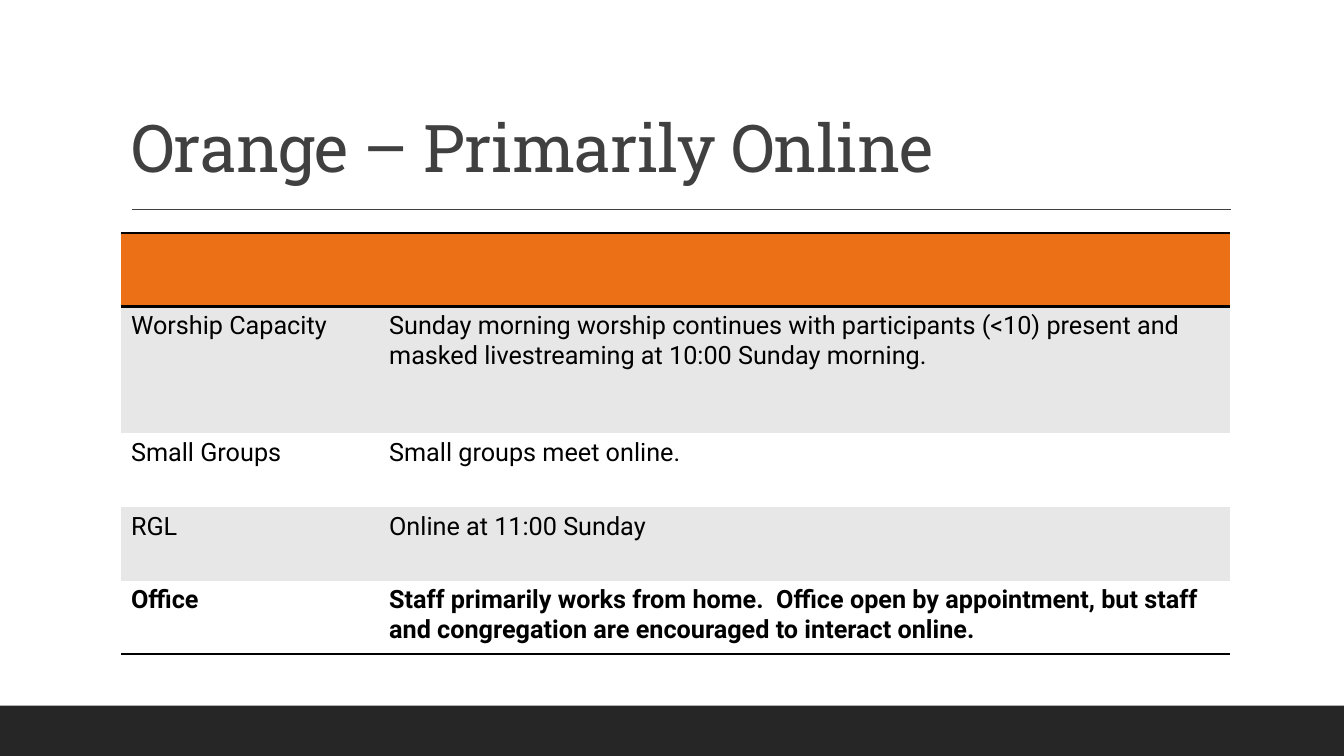
from dataclasses import dataclass

import pptx
import pptx.dml.color
import pptx.enum.shapes
import pptx.enum.text
import pptx.oxml
import pptx.oxml.ns
import pptx.util
from pptx.util import Inches

BLACK, WHITE, GREY = "000000", "FFFFFF", "E7E7E7"
ORANGE, CHARCOAL, FOOTER = "EC7016", "404040", "262626"
LEFT, WIDTH = 1.2, 11
COLUMN_WIDTHS = (2.56, 8.44)


@dataclass
class Row:
    texts: tuple[str, str]
    fill: str
    height: float = 0.73
    bold: bool = False
    rules: str = ""  # sides with a black rule: T, B


ROWS = [
    Row(("", ""), ORANGE, rules="TB"),
    Row(("Worship Capacity",
         "Sunday morning worship continues with participants (<10) present and "
         "masked livestreaming at 10:00 Sunday morning."), GREY, height=1.26, rules="T"),
    Row(("Small Groups", "Small groups meet online."), WHITE),
    Row(("RGL", "Online at 11:00 Sunday"), GREY),
    Row(("Office",
         "Staff primarily works from home.  Office open by appointment, but staff "
         "and congregation are encouraged to interact online."), WHITE, bold=True, rules="B"),
]


def rgb(color: str) -> pptx.dml.color.RGBColor:
    return pptx.dml.color.RGBColor.from_string(color)


def add_run(p, text: str, font: str, size: float, color: str, bold: bool = False):
    r = p.add_run()
    r.text = text
    r.font.name, r.font.size, r.font.bold = font, pptx.util.Pt(size), bold
    r.font.color.rgb = rgb(color)
    return r


def set_borders(cell, rules: str) -> None:
    """Rule the given sides in black and clear the others."""
    tc_pr = cell._tc.get_or_add_tcPr()
    for i, side in enumerate("LRTB"):
        paint = f'<a:solidFill><a:srgbClr val="{BLACK}"/></a:solidFill>' if side in rules else "<a:noFill/>"
        tc_pr.insert(i, pptx.oxml.parse_xml(
            f'<a:ln{side} {pptx.oxml.ns.nsdecls("a")} w="{pptx.util.Pt(2)}">{paint}</a:ln{side}>'))


def add_footer_band(s) -> None:
    sp = s.shapes.add_shape(pptx.enum.shapes.MSO_SHAPE.RECTANGLE,
                            0, Inches(7), Inches(13.33), Inches(0.5))
    sp.shadow.inherit = False
    sp.fill.solid()
    sp.fill.fore_color.rgb = rgb(FOOTER)
    sp.line.fill.background()


def add_title_rule(s) -> None:
    line = s.shapes.add_connector(pptx.enum.shapes.MSO_CONNECTOR.STRAIGHT,
                                  Inches(1.31), Inches(2.08), Inches(12.21), Inches(2.08))
    line.line.color.rgb = rgb(CHARCOAL)
    line.line.width = pptx.util.Pt(1)
    line._element.spPr.append(pptx.oxml.parse_xml(f'<a:effectLst {pptx.oxml.ns.nsdecls("a")}/>'))


def format_title(s, text: str) -> None:
    title = s.shapes.title
    title.left, title.top = Inches(LEFT), Inches(0.31)
    title.width, title.height = Inches(WIDTH), Inches(1.59)
    tf = title.text_frame
    tf.word_wrap = True
    tf.auto_size = pptx.enum.text.MSO_AUTO_SIZE.NONE
    tf.vertical_anchor = pptx.enum.text.MSO_ANCHOR.BOTTOM
    p = tf.paragraphs[0]
    p.alignment = pptx.enum.text.PP_ALIGN.LEFT
    p.line_spacing = 0.9
    r = add_run(p, text, "Roboto Slab", 47, CHARCOAL)
    r.font._element.set("spc", "-50")


def add_policy_table(s) -> None:
    height = sum(row.height for row in ROWS)
    table = s.shapes.add_table(len(ROWS), len(COLUMN_WIDTHS), Inches(LEFT), Inches(2.31),
                               Inches(WIDTH), Inches(height)).table
    table.first_row = table.horz_banding = False
    for column, width in zip(table.columns, COLUMN_WIDTHS):
        column.width = Inches(width)
    for table_row, row in zip(table.rows, ROWS):
        table_row.height = Inches(row.height)
        for cell, text in zip(table_row.cells, row.texts):
            cell.fill.solid()
            cell.fill.fore_color.rgb = rgb(row.fill)
            set_borders(cell, row.rules)
            if text:
                add_run(cell.text_frame.paragraphs[0], text, "Roboto", 18, BLACK, row.bold)


def main() -> None:
    prs = pptx.Presentation()
    prs.slide_width, prs.slide_height = Inches(13.33), Inches(7.5)
    s = prs.slides.add_slide(prs.slide_layouts[5])
    add_footer_band(s)
    add_title_rule(s)
    format_title(s, "Orange – Primarily Online")
    add_policy_table(s)
    prs.save("out.pptx")


if __name__ == "__main__":
    main()
